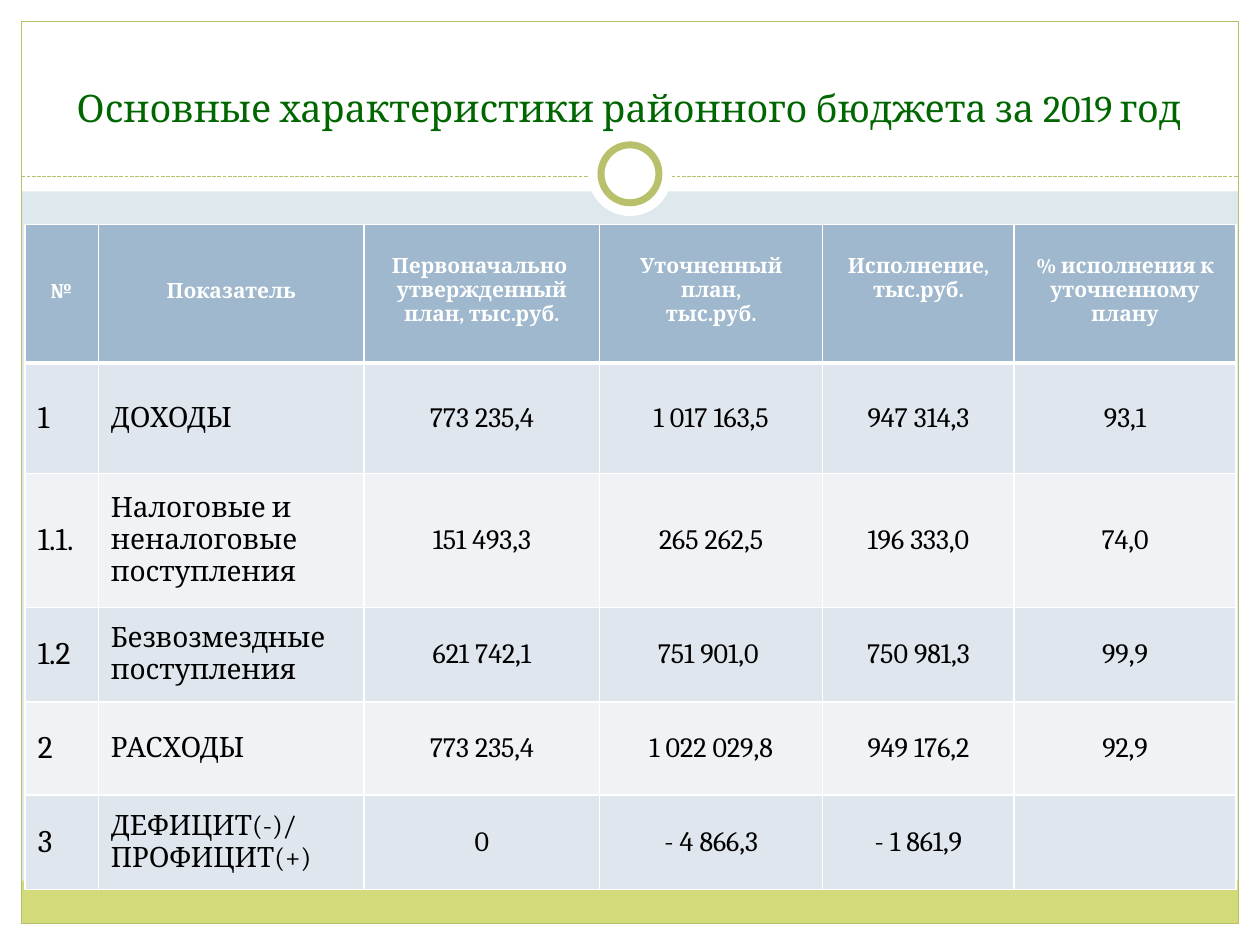
"""Build the slide with the main figures of the 2019 district budget."""
from lxml import etree
from pptx import Presentation, util as u
from pptx.dml.color import RGBColor
from pptx.enum import dml, shapes, text
from pptx.oxml import ns

TITLE = "Основные характеристики районного бюджета за 2019 год"
HEADER = [
    "№", "Показатель", "Первоначально \nутвержденный\nплан, тыс.руб.",
    "Уточненный\nплан,\nтыс.руб.", "Исполнение, тыс.руб.",
    "% исполнения к\nуточненному\nплану",
]
ROWS = [
    ["1", "ДОХОДЫ", "773 235,4", "1 017 163,5", "947 314,3", "93,1"],
    ["1.1.", "Налоговые и неналоговые\nпоступления", "151 493,3", "265 262,5", "196 333,0", "74,0"],
    ["1.2", "Безвозмездные поступления", "621 742,1", "751 901,0 ", "750 981,3", "99,9"],
    ["2", "РАСХОДЫ", "773 235,4", "1 022 029,8", "949 176,2", "92,9"],
    ["3", "ДЕФИЦИТ(-)/\nПРОФИЦИТ(+)", "0", "- 4 866,3", "- 1 861,9", ""],
]
COLUMN_WIDTHS = [0.58, 2.11, 1.87, 1.77, 1.52, 1.76]
ROW_HEIGHTS = [1.1, 0.88, 1.06, 0.75, 0.74, 0.75]
HEADER_INSETS = [0.44, 0.44, 0.24, 0.24, 0.24, 0.24]

THEME = {
    "font": "Cambria", "back": "DDE9EC", "white": "FFFFFF", "black": "000000",
    "olive": "B9C06C", "lime": "D2DA7A", "green": "006600",
    "header": "9FB8CD", "bands": ["DFE6ED", "F0F3F6"],
    "title_size": 21.6, "header_size": 12, "number_size": 18, "body_size": 16,
}
WIDTH, HEIGHT, MARGIN = 10, 7.5, 0.17
RIGHT, BOTTOM = WIDTH - MARGIN, HEIGHT - MARGIN
INNER_WIDTH = WIDTH - 2 * MARGIN
RULE_Y, BADGE_Y = 1.4, 1.38


def color(name):
    return RGBColor.from_string(THEME.get(name, name))


def apply(target, formats):
    for name, value in formats.items():
        setattr(target, name, value)


def add_box(page, kind, place, fill=None, line=None, weight=0.75):
    box = page.shapes.add_shape(kind, *map(u.Inches, place))
    box.shadow.inherit = False
    if fill:
        box.fill.solid()
        box.fill.fore_color.rgb = color(fill)
    else:
        box.fill.background()
    if line:
        box.line.color.rgb = color(line)
        box.line.width = u.Pt(weight)
    else:
        box.line.fill.background()


def add_circle(page, diameter, **style):
    place = (WIDTH / 2 - diameter / 2, BADGE_Y - diameter / 2, diameter, diameter)
    add_box(page, shapes.MSO_SHAPE.OVAL, place, **style)


def write(frame, words, size, ink, align, bold=False):
    frame.text = words
    for para in frame.paragraphs:
        para.alignment = align
        for target in [para.font] + [span.font for span in para.runs]:
            apply(target, {"name": THEME["font"], "size": u.Pt(size), "bold": bold})
            target.color.rgb = color(ink)


def add_borders(cell, bottom):
    properties = cell._tc.get_or_add_tcPr()
    for index, side in enumerate("LRTB"):
        weight = bottom if side == "B" else 1
        line = etree.Element(ns.qn(f"a:ln{side}"), w=str(u.Pt(weight)))
        fill = etree.SubElement(line, ns.qn("a:solidFill"))
        etree.SubElement(fill, ns.qn("a:srgbClr"), val=THEME["white"])
        properties.insert(index, line)


def add_background(page):
    page.background.fill.solid()
    page.background.fill.fore_color.rgb = color("back")
    rectangle = shapes.MSO_SHAPE.RECTANGLE
    for place in [(0, BOTTOM, WIDTH, MARGIN), (0, 0, WIDTH, 1.52),
                  (0, 0, MARGIN, HEIGHT), (RIGHT, 0, MARGIN, HEIGHT)]:
        add_box(page, rectangle, place, fill="white")
    add_box(page, rectangle, (MARGIN, BOTTOM - 0.34, INNER_WIDTH, 0.34), fill="lime")
    add_box(page, rectangle, (MARGIN, MARGIN, INNER_WIDTH, BOTTOM - MARGIN), line="olive")
    ends = map(u.Inches, (MARGIN, RULE_Y, RIGHT, RULE_Y))
    rule = page.shapes.add_connector(shapes.MSO_CONNECTOR.STRAIGHT, *ends)
    rule.line.color.rgb = color("olive")
    apply(rule.line, {"width": u.Pt(0.75), "dash_style": dml.MSO_LINE.SQUARE_DOT})
    etree.SubElement(rule._element.spPr, ns.qn("a:effectLst"))
    add_circle(page, 0.67, fill="white")
    add_circle(page, 0.46, fill="white", line="olive", weight=4)


def add_title(page):
    box = page.shapes.add_textbox(*map(u.Inches, (0.33, 0.25, 9.33, 0.83)))
    apply(box.text_frame, {"word_wrap": True, "vertical_anchor": text.MSO_ANCHOR.BOTTOM})
    write(box.text_frame, TITLE, THEME["title_size"], "green", text.PP_ALIGN.CENTER)


def add_budget_table(page):
    place = (0.2, 1.78, sum(COLUMN_WIDTHS), sum(ROW_HEIGHTS))
    table = page.shapes.add_table(len(ROW_HEIGHTS), len(COLUMN_WIDTHS),
                                  *map(u.Inches, place)).table
    for column, width in zip(table.columns, COLUMN_WIDTHS):
        column.width = u.Inches(width)
    for row, height in zip(table.rows, ROW_HEIGHTS):
        row.height = u.Inches(height)
    for r, words in enumerate([HEADER] + ROWS):
        for c, word in enumerate(words):
            cell = table.cell(r, c)
            cell.fill.solid()
            if r == 0:
                cell.fill.fore_color.rgb = color("header")
                cell.margin_top = u.Inches(HEADER_INSETS[c])
                write(cell.text_frame, word, THEME["header_size"], "white",
                      text.PP_ALIGN.CENTER, bold=True)
            else:
                cell.fill.fore_color.rgb = color(THEME["bands"][(r - 1) % 2])
                cell.vertical_anchor = text.MSO_ANCHOR.MIDDLE
                size = THEME["number_size" if c == 0 else "body_size"]
                align = text.PP_ALIGN.LEFT if c < 2 else text.PP_ALIGN.CENTER
                write(cell.text_frame, word, size, "black", align)
            add_borders(cell, bottom=3 if r == 0 else 1)


def main():
    deck = Presentation()
    apply(deck, {"slide_width": u.Inches(WIDTH), "slide_height": u.Inches(HEIGHT)})
    page = deck.slides.add_slide(deck.slide_layouts[6])
    add_background(page)
    add_title(page)
    add_budget_table(page)
    deck.save("out.pptx")


if __name__ == "__main__":
    main()
